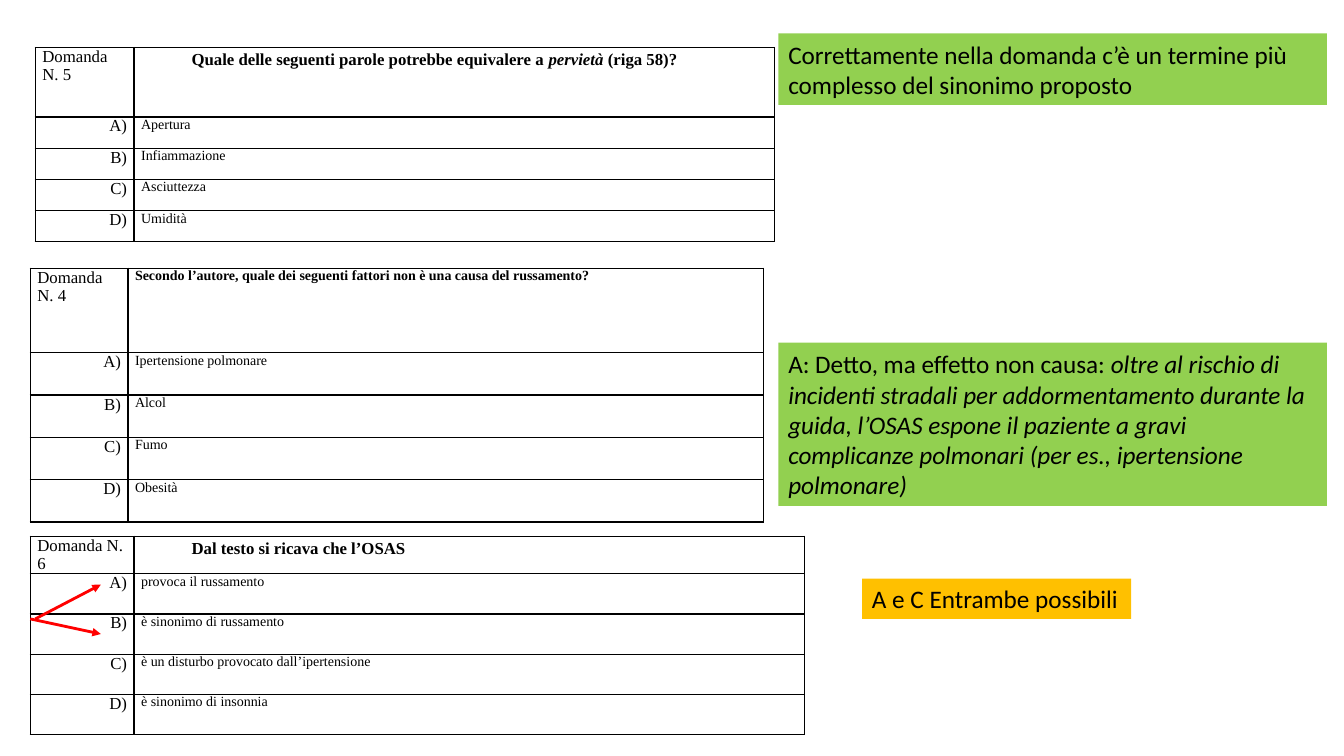
from lxml import etree
from pptx import Presentation
from pptx.dml.color import RGBColor
from pptx.enum.shapes import MSO_CONNECTOR, MSO_SHAPE
from pptx.enum.text import MSO_ANCHOR, MSO_AUTO_SIZE, PP_ALIGN
from pptx.oxml.ns import qn
from pptx.util import Inches, Pt

LEFT, RIGHT, JUSTIFY = PP_ALIGN.LEFT, PP_ALIGN.RIGHT, PP_ALIGN.JUSTIFY
TOP, MIDDLE = MSO_ANCHOR.TOP, MSO_ANCHOR.MIDDLE
FIT = MSO_AUTO_SIZE.SHAPE_TO_FIT_TEXT
RECT, STRAIGHT = MSO_SHAPE.RECTANGLE, MSO_CONNECTOR.STRAIGHT

COLORS = {"ink": "000000", "paper": "FFFFFF", "green": "92D050",
          "amber": "FFC000", "red": "FF0000"}


def color(name):
    return RGBColor.from_string(COLORS[name])


class Quiz:
    serif, sans = "Times New Roman", "Calibri"

    def __init__(self, slide):
        self.slide = slide

    def add_runs(self, para, parts, font, size, bold=False):
        """Fill a paragraph with parts; every second part is italic."""
        for i, part in enumerate(parts):
            run = para.add_run()
            run.text = part
            run.font.name, run.font.size = font, Pt(size)
            run.font.bold, run.font.italic = bold, i % 2 == 1
            run.font.color.rgb = color("ink")

    def border(self, cell):
        props = cell._tc.get_or_add_tcPr()
        for side in ("lnL", "lnR", "lnT", "lnB"):
            line = etree.SubElement(props, qn("a:" + side), w=str(Pt(1)))
            fill = etree.SubElement(line, qn("a:solidFill"))
            etree.SubElement(fill, qn("a:srgbClr"), val=COLORS["ink"])

    def cell(self, cell, parts, size, align=LEFT, bold=False):
        self.border(cell)
        cell.fill.solid()
        cell.fill.fore_color.rgb = color("paper")
        cell.margin_left = cell.margin_right = Inches(0.07)
        cell.margin_top = cell.margin_bottom = 0
        para = cell.text_frame.paragraphs[0]
        para.alignment = align
        self.add_runs(para, parts, self.serif, size, bold)
        return para

    def question(self, number, title, answers, spot, cols, head, row, inset=True):
        """Draw a question table; an inset title is larger and indented."""
        heights = [head] + [row] * len(answers)
        frame = self.slide.shapes.add_table(
            len(heights), 2, *map(Inches, (*spot, sum(cols), sum(heights))))
        table = frame.table
        table.first_row = table.horz_banding = False
        for col, width in zip(table.columns, cols):
            col.width = Inches(width)
        for line, height in zip(table.rows, heights):
            line.height = Inches(height)
        self.cell(table.cell(0, 0), [f"Domanda N. {number}"], 12)
        if inset:
            para = self.cell(table.cell(0, 1), title, 12, bold=True)
            para.line_spacing, para.space_after = 1.15, Pt(10)
            props = para._p.get_or_add_pPr()
            props.set("marL", str(Inches(0.5)))
            props.set("indent", "0")
        else:
            self.cell(table.cell(0, 1), title, 10, JUSTIFY, True)
        for i, (mark, answer) in enumerate(zip("ABCD", answers), 1):
            self.cell(table.cell(i, 0), [mark + ")"], 12, RIGHT)
            self.cell(table.cell(i, 1), [answer], 10, JUSTIFY)

    def note(self, parts, box, fill, anchor=MIDDLE, wrap=True):
        shape = self.slide.shapes.add_shape(RECT, *map(Inches, box))
        shape.shadow.inherit = False
        shape.fill.solid()
        shape.fill.fore_color.rgb = color(fill)
        shape.line.fill.background()
        frame = shape.text_frame
        frame.word_wrap, frame.auto_size = wrap, FIT
        frame.vertical_anchor = anchor
        para = frame.paragraphs[0]
        para.alignment = LEFT
        self.add_runs(para, parts, self.sans, 18)

    def arrow(self, start, end):
        link = self.slide.shapes.add_connector(
            STRAIGHT, *map(Inches, (*start, *end)))
        link.line.color.rgb, link.line.width = color("red"), Pt(2)
        etree.SubElement(link.line._get_or_add_ln(), qn("a:tailEnd"), type="triangle")
        etree.SubElement(link._element.spPr, qn("a:effectLst"))


def main():
    deck = Presentation()
    deck.slide_width, deck.slide_height = Inches(13.33), Inches(7.5)
    quiz = Quiz(deck.slides.add_slide(deck.slide_layouts[6]))

    quiz.question(
        5, ["Quale delle seguenti parole potrebbe equivalere a ", "pervietà", " (riga 58)?"],
        ["Apertura", "Infiammazione", "Asciuttezza", "Umidità"],
        (0.35, 0.47), (0.98, 6.35), 0.69, 0.31)
    quiz.question(
        6, ["Dal testo si ricava che l’OSAS"],
        ["provoca il russamento", "è sinonimo di russamento",
         "è un disturbo provocato dall’ipertensione", "è sinonimo di insonnia"],
        (0.3, 5.32), (1.03, 6.65), 0.37, 0.4)
    quiz.note(["Correttamente nella domanda c’è un termine più complesso "
               "del sinonimo proposto"], (7.72, 0.33, 5.44, 0.71), "green")
    quiz.arrow((0.35, 6.14), (1, 5.8))
    quiz.question(
        4, ["Secondo l’autore, quale dei seguenti fattori non è una causa del russamento?"],
        ["Ipertensione polmonare", "Alcol", "Fumo", "Obesità"],
        (0.3, 2.66), (0.97, 6.3), 0.84, 0.42, inset=False)
    quiz.arrow((0.3, 6.14), (1, 6.29))
    quiz.note(["A e C Entrambe possibili"], (8.55, 5.74, 2.67, 0.4), "amber", TOP, False)
    quiz.note(["A: Detto, ma effetto non causa: ",
               "oltre al rischio di incidenti stradali per addormentamento durante "
               "la guida, l’OSAS espone il paziente a gravi complicanze polmonari "
               "(per es., ipertensione polmonare)"], (7.72, 3.4, 5.44, 1.62), "green")
    deck.save("out.pptx")


if __name__ == "__main__":
    main()
